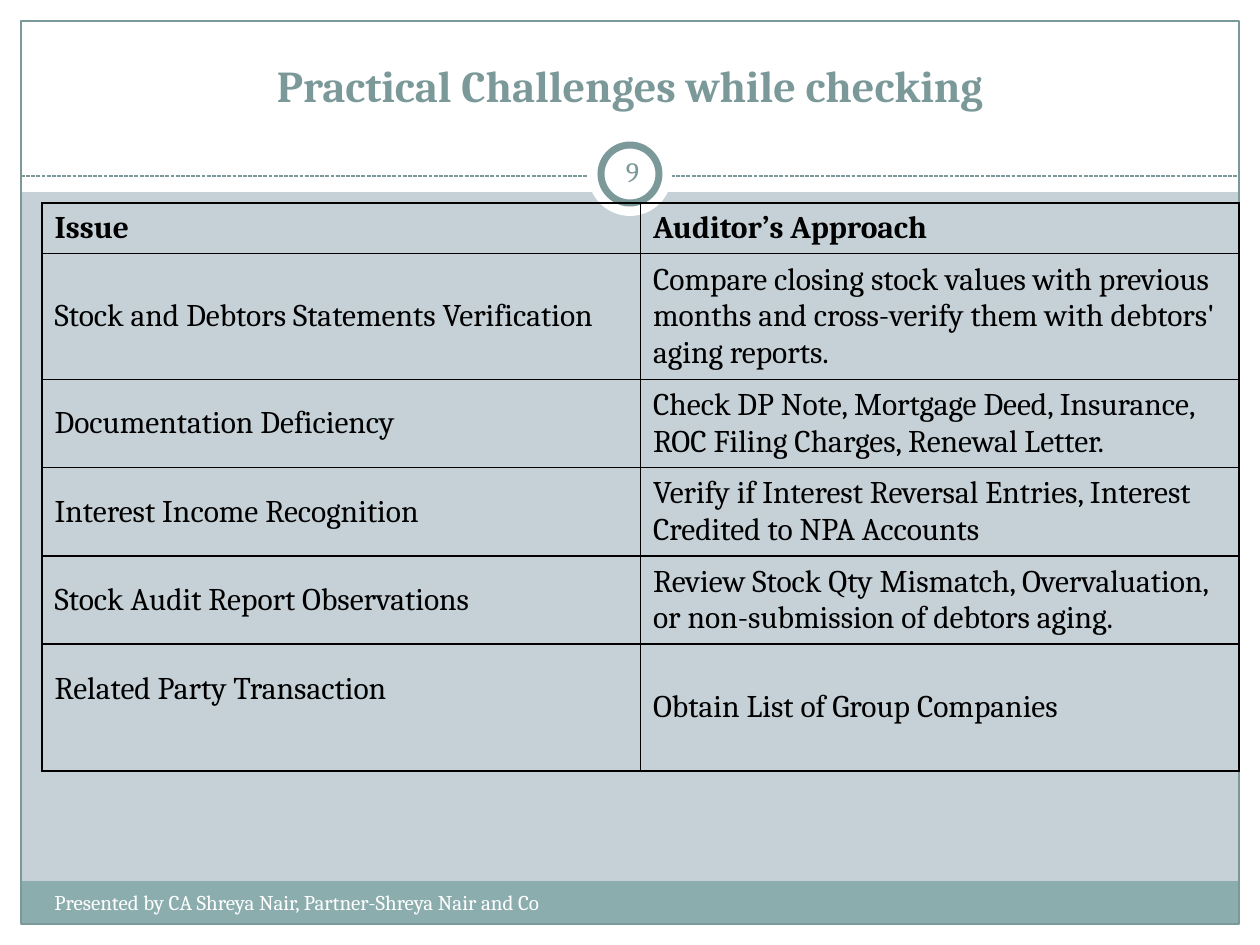
from dataclasses import dataclass, field

from lxml.etree import SubElement
from pptx import Presentation
from pptx.dml.color import RGBColor
from pptx.enum.dml import MSO_LINE
from pptx.enum.shapes import MSO_CONNECTOR, MSO_SHAPE
from pptx.enum.text import MSO_ANCHOR, PP_ALIGN
from pptx.oxml.ns import qn
from pptx.util import Emu, Pt

WHITE, BLACK = "FFFFFF", "000000"
TEAL, BAND, PAPER = "7C999A", "8CADAE", "C5D1D7"
WIDE, HIGH, EDGE = 1260, 945, 21
FONT = "Cambria"


@dataclass
class Panel:
    """A preset shape with its fill and outline."""
    box: tuple
    fill: str | None = WHITE
    line: str | None = None
    width: float = 0.75
    kind: MSO_SHAPE = MSO_SHAPE.RECTANGLE


@dataclass
class Label:
    """A text box with its font and frame settings."""
    text: str
    box: tuple
    size: float
    color: str
    bold: bool = False
    align: PP_ALIGN = PP_ALIGN.LEFT
    frame: dict = field(default_factory=dict)


PANELS = [
    Panel((0, HIGH - EDGE, WIDE, EDGE)),
    Panel((0, 0, WIDE, 192)),
    Panel((0, 0, EDGE, HIGH)),
    Panel((WIDE - EDGE, 0, EDGE, HIGH)),
    Panel((EDGE, 881, WIDE - 2 * EDGE, 43), BAND),
    Panel((EDGE, EDGE, WIDE - 2 * EDGE, HIGH - 2 * EDGE), None, TEAL),
]
DISCS = [
    Panel((588, 132, 84, 84), kind=MSO_SHAPE.OVAL),
    Panel((601, 145, 58, 58), WHITE, TEAL, 4, MSO_SHAPE.OVAL),
]
LABELS = [
    Label("Practical Challenges while checking", (42, 58, 1176, 105), 25.2,
          TEAL, True, PP_ALIGN.CENTER, {"margin_top": 0}),
    Label("Presented by CA Shreya Nair, Partner-Shreya Nair and Co",
          (42, 883, 662, 50), 12, WHITE),
    Label("9", (601, 141, 63, 60), 16, TEAL, False, PP_ALIGN.CENTER,
          {"vertical_anchor": MSO_ANCHOR.MIDDLE, "margin_left": 6,
           "margin_right": 6}),
]
ROWS = [
    ("Issue", "Auditor’s Approach"),
    ("Stock and Debtors Statements Verification",
     "Compare closing stock values with previous months and "
     "cross-verify them with debtors' aging reports."),
    ("Documentation Deficiency",
     "Check DP Note, Mortgage Deed, Insurance, ROC Filing Charges, "
     "Renewal Letter."),
    ("Interest Income Recognition",
     "Verify if Interest Reversal Entries, Interest Credited to "
     "NPA Accounts"),
    ("Stock Audit Report Observations",
     "Review Stock Qty Mismatch, Overvaluation, or non-submission of "
     "debtors aging."),
    ("Related Party Transaction", "Obtain List of Group Companies"),
]
TALL = [50, 88, 88, 88, 88, 127]


def px(size: int) -> Emu:
    """Turn pixels into EMU."""
    return Emu(round(size * 914400 / 126))


def rgb(code: str) -> RGBColor:
    """Turn a hex string into a colour."""
    return RGBColor.from_string(code)


def paint(fill, code: str | None) -> None:
    """Set a solid fill, or none."""
    if code is None:
        fill.background()
    else:
        fill.solid()
        fill.fore_color.rgb = rgb(code)


def write(frame, text: str, size: float, color: str, bold: bool,
          align: PP_ALIGN = PP_ALIGN.LEFT) -> None:
    """Write one formatted paragraph into a text frame."""
    para = frame.paragraphs[0]
    para.alignment = align
    run = para.add_run()
    run.text = text
    look = {"name": FONT, "size": Pt(size), "bold": bold}
    for name, value in look.items():
        setattr(run.font, name, value)
    run.font.color.rgb = rgb(color)


def panel(slide, item: Panel) -> None:
    """Draw a preset shape."""
    shape = slide.shapes.add_shape(item.kind, *map(px, item.box))
    shape.shadow.inherit = False
    paint(shape.fill, item.fill)
    paint(shape.line.fill, item.line)
    if item.line:
        shape.line.width = Pt(item.width)


def rule(slide, left: int, right: int, top: int) -> None:
    """Draw a dashed level line."""
    line = slide.shapes.add_connector(
        MSO_CONNECTOR.STRAIGHT, *map(px, (left, top, right, top)))
    line.line.color.rgb = rgb(TEAL)
    line.line.width = Pt(0.75)
    line.line.dash_style = MSO_LINE.SQUARE_DOT
    SubElement(line._element.spPr, qn("a:effectLst"))


def label(slide, item: Label) -> None:
    """Draw a text box."""
    frame = slide.shapes.add_textbox(*map(px, item.box)).text_frame
    frame.word_wrap = True
    for name, value in item.frame.items():
        setattr(frame, name, px(value) if "margin" in name else value)
    write(frame, item.text, item.size, item.color, item.bold, item.align)


def border(cell) -> None:
    """Put a black line on all four sides of a cell."""
    props = cell._tc.get_or_add_tcPr()
    for spot, side in enumerate(("lnL", "lnR", "lnT", "lnB")):
        line = props.makeelement(qn(f"a:{side}"), {"w": str(Pt(1))})
        solid = SubElement(line, qn("a:solidFill"))
        SubElement(solid, qn("a:srgbClr"), val=BLACK)
        props.insert(spot, line)


def grid(slide) -> None:
    """Draw the table of issues and approaches."""
    box = (42, 203, 1197, sum(TALL))
    table = slide.shapes.add_table(len(ROWS), 2, *map(px, box)).table
    table.first_row = table.horz_banding = False
    for row, (texts, tall) in enumerate(zip(ROWS, TALL)):
        table.rows[row].height = px(tall)
        for col, text in enumerate(texts):
            cell = table.cell(row, col)
            cell.vertical_anchor = MSO_ANCHOR.MIDDLE
            paint(cell.fill, None)
            border(cell)
            write(cell.text_frame, text, 18, BLACK, row == 0)
    table.cell(len(ROWS) - 1, 0).margin_bottom = px(43)


def main() -> None:
    """Build and save the slide."""
    deck = Presentation()
    deck.slide_width, deck.slide_height = px(WIDE), px(HIGH)
    slide = deck.slides.add_slide(deck.slide_layouts[6])
    paint(slide.background.fill, PAPER)
    for item in PANELS:
        panel(slide, item)
    rule(slide, EDGE, WIDE - EDGE, 176)
    for item in DISCS:
        panel(slide, item)
    for item in LABELS:
        label(slide, item)
    grid(slide)
    deck.save("out.pptx")


if __name__ == "__main__":
    main()
